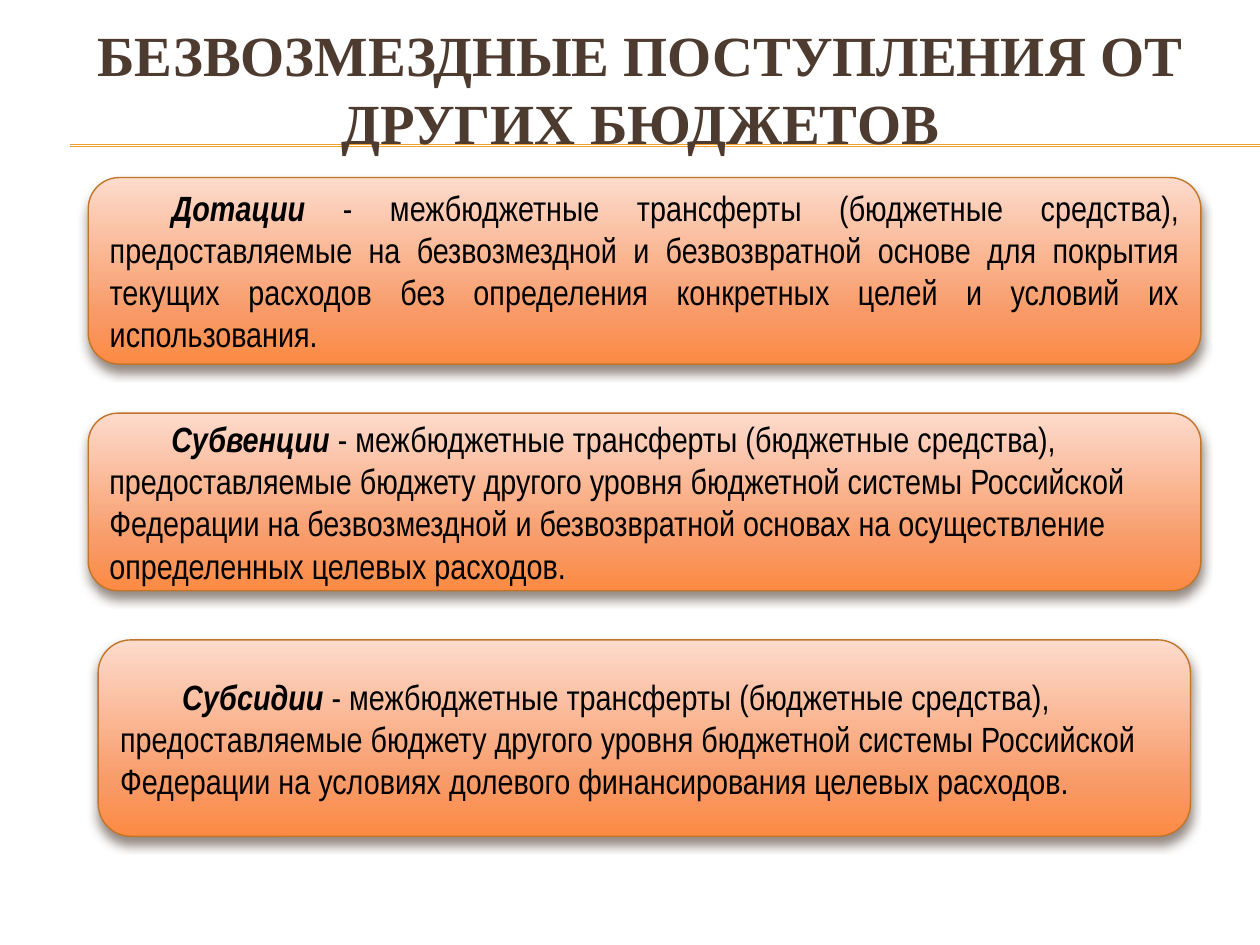
from lxml.etree import SubElement
from pptx import Presentation
from pptx.dml.color import RGBColor
from pptx.enum.shapes import MSO_CONNECTOR as Connector, MSO_SHAPE as Shape
from pptx.enum.text import MSO_ANCHOR as Anchor, PP_ALIGN as Align
from pptx.oxml.ns import qn
from pptx.util import Cm, Pt


def color(hex_value):
    return RGBColor.from_string(hex_value)


def add_text(para, text, font="Arial Narrow", size=20, fill="000000", bold=False, italic=False):
    span = para.add_run()
    span.text = text
    span.font.name = font
    span.font.size = Pt(size)
    span.font.color.rgb = color(fill)
    span.font.bold = bold
    span.font.italic = italic


deck = Presentation()
deck.slide_width, deck.slide_height = Cm(25.4), Cm(19.05)
page = deck.slides.add_slide(deck.slide_layouts[6])

# Double rule behind the title
for top in (2.92, 2.95):
    rule = page.shapes.add_connector(Connector.STRAIGHT, Cm(1.42), Cm(top), Cm(25.4), Cm(top))
    rule.line.color.rgb = color("F0A22E")
    rule.line.width = Pt(0.75)
    SubElement(rule._element.spPr, qn("a:effectLst"))

# The deep bottom margin lifts the title over the rule
title = page.shapes.add_textbox(Cm(0.84), Cm(1.27), Cm(24.13), Cm(2.34))
frame = title.text_frame
frame.word_wrap = True
frame.vertical_anchor = Anchor.MIDDLE
frame.margin_bottom = Cm(1.45)
para = frame.paragraphs[0]
para.alignment = Align.CENTER
add_text(para, "БЕЗВОЗМЕЗДНЫЕ ПОСТУПЛЕНИЯ ОТ ДРУГИХ БЮДЖЕТОВ",
         font="Times New Roman", size=32.4, fill="4E3B30", bold=True)

# Definitions: left, top, width, height, alignment, term, meaning
definitions = [
    (1.78, 3.58, 22.43, 3.76, Align.JUSTIFY, "Дотации",
     " - межбюджетные трансферты (бюджетные средства), предоставляемые на безвозмездной "
     "и безвозвратной основе для покрытия текущих расходов без определения конкретных "
     "целей и условий их использования."),
    (1.78, 8.33, 22.43, 3.58, Align.LEFT, "Субвенции",
     " - межбюджетные трансферты (бюджетные средства), предоставляемые бюджету другого "
     "уровня бюджетной системы Российской Федерации на безвозмездной и безвозвратной "
     "основах на осуществление определенных целевых расходов."),
    (1.98, 12.9, 22.02, 3.96, Align.LEFT, "Субсидии",
     " - межбюджетные трансферты (бюджетные средства), предоставляемые бюджету другого "
     "уровня бюджетной системы Российской Федерации на условиях долевого финансирования "
     "целевых расходов."),
]
gradient_stops = [(0, "FDDBCC"), (72, "F89B69"), (100, "FC8A43")]

for left, top, width, height, alignment, term, meaning in definitions:
    box = page.shapes.add_shape(Shape.ROUNDED_RECTANGLE, Cm(left), Cm(top), Cm(width), Cm(height))
    box.line.color.rgb = color("C17529")
    box.line.width = Pt(0.79)

    box.fill.gradient()
    box.fill.gradient_angle = 270
    properties = box._element.spPr
    stop_list = properties.find(qn("a:gradFill")).find(qn("a:gsLst"))
    for stop in list(stop_list):
        stop_list.remove(stop)
    for percent, shade in gradient_stops:
        stop = SubElement(stop_list, qn("a:gs"), pos=str(percent * 1000))
        SubElement(stop, qn("a:srgbClr"), val=shade)

    box.shadow.inherit = False
    shadow = SubElement(properties.find(qn("a:effectLst")), qn("a:outerShdw"),
                        blurRad=str(Pt(6)), dist=str(Pt(4)), dir="5400000", rotWithShape="0")
    shadow_color = SubElement(shadow, qn("a:srgbClr"), val="4E3B30")
    SubElement(shadow_color, qn("a:alpha"), val="60000")

    frame = box.text_frame
    frame.word_wrap = True
    frame.vertical_anchor = Anchor.MIDDLE
    para = frame.paragraphs[0]
    para.alignment = alignment
    para._p.get_or_add_pPr().set("indent", str(Cm(1.25)))
    add_text(para, term, bold=True, italic=True)
    add_text(para, meaning)

deck.save("out.pptx")
